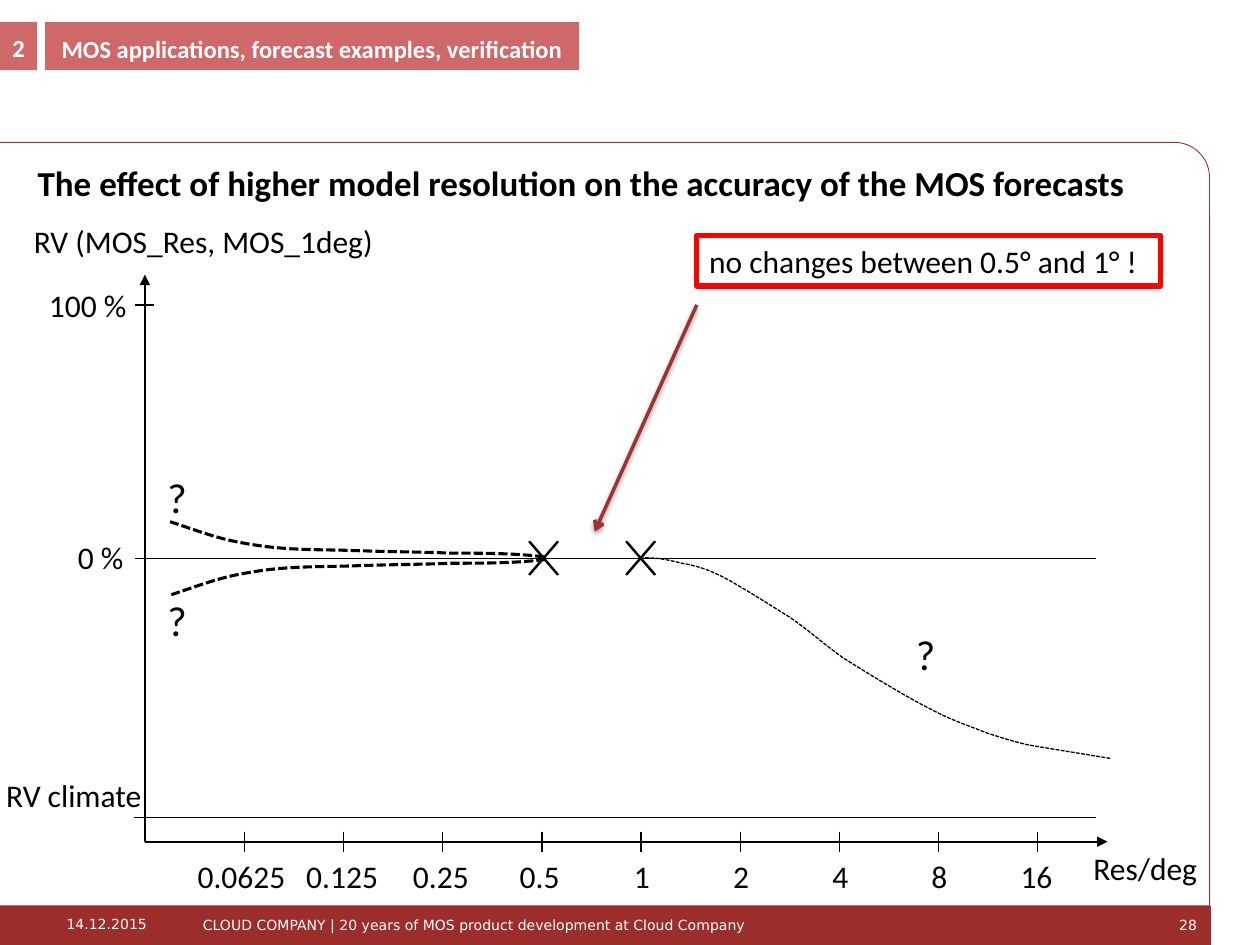
from lxml import etree
from pptx import Presentation
from pptx.dml.color import RGBColor
from pptx.enum.dml import MSO_LINE
from pptx.enum.shapes import MSO_CONNECTOR, MSO_SHAPE
from pptx.enum.text import MSO_ANCHOR, MSO_AUTO_SIZE, PP_ALIGN
from pptx.oxml.ns import qn
from pptx.util import Inches, Pt

CELL = Inches(0.1)
COLUMNS, ROWS = 100, 75
RECTANGLE = MSO_SHAPE.RECTANGLE
CORNER = MSO_SHAPE.ROUND_1_RECTANGLE
CROSS = MSO_SHAPE.MATH_MULTIPLY
STRAIGHT = MSO_CONNECTOR.STRAIGHT
DASH = MSO_LINE.SQUARE_DOT
MIDDLE, GROW = MSO_ANCHOR.MIDDLE, MSO_AUTO_SIZE.SHAPE_TO_FIT_TEXT
CENTER, RIGHT = PP_ALIGN.CENTER, PP_ALIGN.RIGHT

BLACK, WHITE, RED = "000000", "FFFFFF", "FF0000"
WINE, FOOTER, ROSE = "9D3232", "9B2D2A", "CF6868"

LABEL = {"name": "Calibri", "size": Pt(18)}
QUESTION = {"name": "Calibri", "size": Pt(24)}
TITLE = {"name": "Calibri", "size": Pt(20), "bold": True}
TAB = {"name": "Calibri", "size": Pt(14), "bold": True}
SMALL = {"name": "DejaVu Sans", "size": Pt(8)}

AXIS_X, AXIS_Y, ZERO_Y, CLIMATE_Y = 11.5, 66.8, 44.3, 64.9
FIRST_TICK, TICK_STEP, TICK_HALF = 19.4, 7.87, 0.8
LINE_END = 87
TICKS = [("0.0625", 9.4), ("0.125", 7.9), ("0.25", 6.7), ("0.5", 5.5),
         ("1", 3.1), ("2", 3.1), ("4", 3.1), ("8", 3.1), ("16", 4.7)]

FINE_CURVE = [(43.2, 44.2),
              (40.9, 43.9), (38.3, 43.9), (35.8, 43.9),
              (33.4, 43.8), (31, 43.8), (28.3, 43.7),
              (25.7, 43.6), (22.6, 43.7), (19.9, 43.2),
              (17.4, 42.8), (16.5, 42.4), (13.5, 41.4)]
COARSE_CURVE = [(50.8, 44.3),
                (51.8, 44.2), (53, 44.4), (54.1, 44.7),
                (55.2, 44.9), (56, 45.1), (57.4, 45.8),
                (58.9, 46.6), (61.1, 48), (62.7, 49),
                (64.3, 50.1), (65.1, 50.9), (66.9, 52.2),
                (68.8, 53.4), (71.9, 55.3), (73.9, 56.3),
                (75.8, 57.3), (77.2, 57.7), (78.4, 58.2),
                (79.7, 58.6), (79.9, 58.7), (81.5, 59.1),
                (83.2, 59.4), (88.2, 60.2), (88.2, 60.2)]


def cells(*values):
    return [round(value * CELL) for value in values]


def color(code):
    return RGBColor.from_string(code)


def apply(target, values):
    for name, value in values.items():
        setattr(target, name, value)


def style_line(line, code, width, dash=None):
    line.color.rgb = color(code)
    line.width = Pt(width)
    if dash:
        line.dash_style = dash


def add_block(page, kind, place, fill=None, edge=None, adjust=None):
    block = page.shapes.add_shape(kind, *cells(*place))
    block.shadow.inherit = False
    if fill:
        block.fill.solid()
        block.fill.fore_color.rgb = color(fill)
    else:
        block.fill.background()
    if edge:
        style_line(block.line, *edge)
    else:
        block.line.fill.background()
    if adjust is not None:
        block.adjustments[0] = adjust
    return block


def add_text(page, text, place, font, code=BLACK, align=None, **frame):
    box = page.shapes.add_textbox(*cells(*place))
    apply(box.text_frame, {"word_wrap": True, "auto_size": GROW, **frame})
    para = box.text_frame.paragraphs[0]
    if align is not None:
        para.alignment = align
    span = para.add_run()
    span.text = text
    apply(span.font, font)
    span.font.color.rgb = color(code)
    return box


def add_line(page, start, end, code=BLACK, width=0.75, head=None, shadow=False):
    line = page.shapes.add_connector(STRAIGHT, *cells(*start, *end))
    style_line(line.line, code, width)
    if head:
        etree.SubElement(line.line._get_or_add_ln(), qn("a:tailEnd"), type=head)
    properties = line._element.spPr
    effects = etree.SubElement(properties, qn("a:effectLst"))
    if shadow:
        outer = etree.SubElement(effects, qn("a:outerShdw"), blurRad=str(Pt(3.1)),
                                 dist=str(Pt(1.6)), dir="5400000", rotWithShape="0")
        tint = etree.SubElement(outer, qn("a:srgbClr"), val=BLACK)
        etree.SubElement(tint, qn("a:alpha"), val="38000")
    return line


def bezier(points, steps=8):
    curve = [points[0]]
    for first in range(0, len(points) - 1, 3):
        corners = points[first:first + 4]
        for step in range(1, steps + 1):
            t = step / steps
            weights = ((1 - t) ** 3, 3 * t * (1 - t) ** 2, 3 * t * t * (1 - t), t ** 3)
            curve.append(tuple(sum(w * p[axis] for w, p in zip(weights, corners))
                               for axis in (0, 1)))
    return curve


def add_curve(page, points, width):
    start, *rest = [cells(*point) for point in bezier(points)]
    builder = page.shapes.build_freeform(*start)
    builder.add_line_segments(rest, close=False)
    curve = builder.convert_to_shape()
    curve.shadow.inherit = False
    curve.fill.background()
    style_line(curve.line, BLACK, width, DASH)


def add_frame(page):
    add_block(page, CORNER, (-0.1, 11.3, 96.1, 60.6), edge=(WINE, 0.5), adjust=0.046)
    add_block(page, RECTANGLE, (0, 71.9, 96.1, 3.1), FOOTER)
    add_text(page, "14.12.2015", (4.3, 72.2, 8.6, 2.4), SMALL, WHITE, word_wrap=False)
    add_text(page, "CLOUD COMPANY | 20 years of MOS product development at Cloud Company",
             (16.1, 71.8, 70.2, 3.2), SMALL, WHITE,
             auto_size=None, vertical_anchor=MIDDLE, margin_left=0)
    add_text(page, "28", (88.3, 71.8, 7.7, 3.2), SMALL, WHITE, RIGHT,
             auto_size=None, vertical_anchor=MIDDLE)


def add_header(page):
    add_block(page, RECTANGLE, (3.5, 1.7, 42.5, 3.9), ROSE, (WHITE, 0.5))
    add_text(page, "MOS applications, forecast examples, verification",
             (3.9, 2.2, 45.3, 3.4), TAB, WHITE)
    add_block(page, RECTANGLE, (-0.1, 1.7, 3.1, 3.9), ROSE, ("F2F2F2", 0.5))
    add_text(page, "2", (0, 2.1, 3, 3.4), TAB, WHITE, word_wrap=False)
    add_text(page, "The effect of higher model resolution on the accuracy of the MOS forecasts",
             (2, 12.3, 89.8, 4.4), TITLE)


def add_axes(page):
    add_line(page, (AXIS_X, AXIS_Y), (AXIS_X, 21.8), width=1, head="triangle")
    add_line(page, (AXIS_X, AXIS_Y), (87.9, AXIS_Y), width=1, head="triangle")
    for left, right, y in ((10.7, 12.2, 24.2), (10.7, LINE_END, ZERO_Y),
                           (10.6, LINE_END, CLIMATE_Y)):
        add_line(page, (left, y), (right, y))
    for number, (label, width) in enumerate(TICKS):
        x = FIRST_TICK + number * TICK_STEP
        add_line(page, (x, AXIS_Y - TICK_HALF), (x, AXIS_Y + TICK_HALF))
        add_text(page, label, (x - width / 2, 67.5, width, 4), LABEL)
    add_text(page, "RV (MOS_Res, MOS_1deg)", (1.7, 17.1, 35, 4), LABEL)
    add_text(page, "100 %", (2.9, 22.2, 8.6, 4), LABEL)
    add_text(page, "0 %", (5.2, 42.2, 6.3, 4), LABEL)
    add_text(page, "RV climate", (-0.6, 61.1, 12.9, 4), LABEL, align=CENTER, word_wrap=False)
    add_text(page, "Res/deg", (85.8, 66.9, 11, 4), LABEL)


def add_curves(page):
    mirrored = [(x + 0.1, 2 * ZERO_Y - y) for x, y in FINE_CURVE]
    for points, width in ((FINE_CURVE, 1.75), (mirrored, 1.75), (COARSE_CURVE, 0.75)):
        add_curve(page, points, width)
    for left in (41, 48.7):
        add_block(page, CROSS, (left, 41.8, 4.3, 5), BLACK, (BLACK, 1), 0.013)
    for left, top in ((12.3, 36.9), (12.3, 46.7), (71.7, 49.4)):
        add_text(page, "?", (left, top, 3.1, 5), QUESTION)


def add_callout(page):
    box = add_text(page, "no changes between 0.5° and 1° !", (55.3, 18.7, 36.8, 4), LABEL)
    style_line(box.line, RED, 3)
    add_line(page, (55.3, 24.2), (47.2, 42.2), WINE, 2, "arrow", shadow=True)


def main():
    deck = Presentation()
    deck.slide_width, deck.slide_height = COLUMNS * CELL, ROWS * CELL
    page = deck.slides.add_slide(deck.slide_layouts[6])
    for add_part in (add_frame, add_axes, add_curves, add_callout, add_header):
        add_part(page)
    deck.save("out.pptx")


if __name__ == "__main__":
    main()
